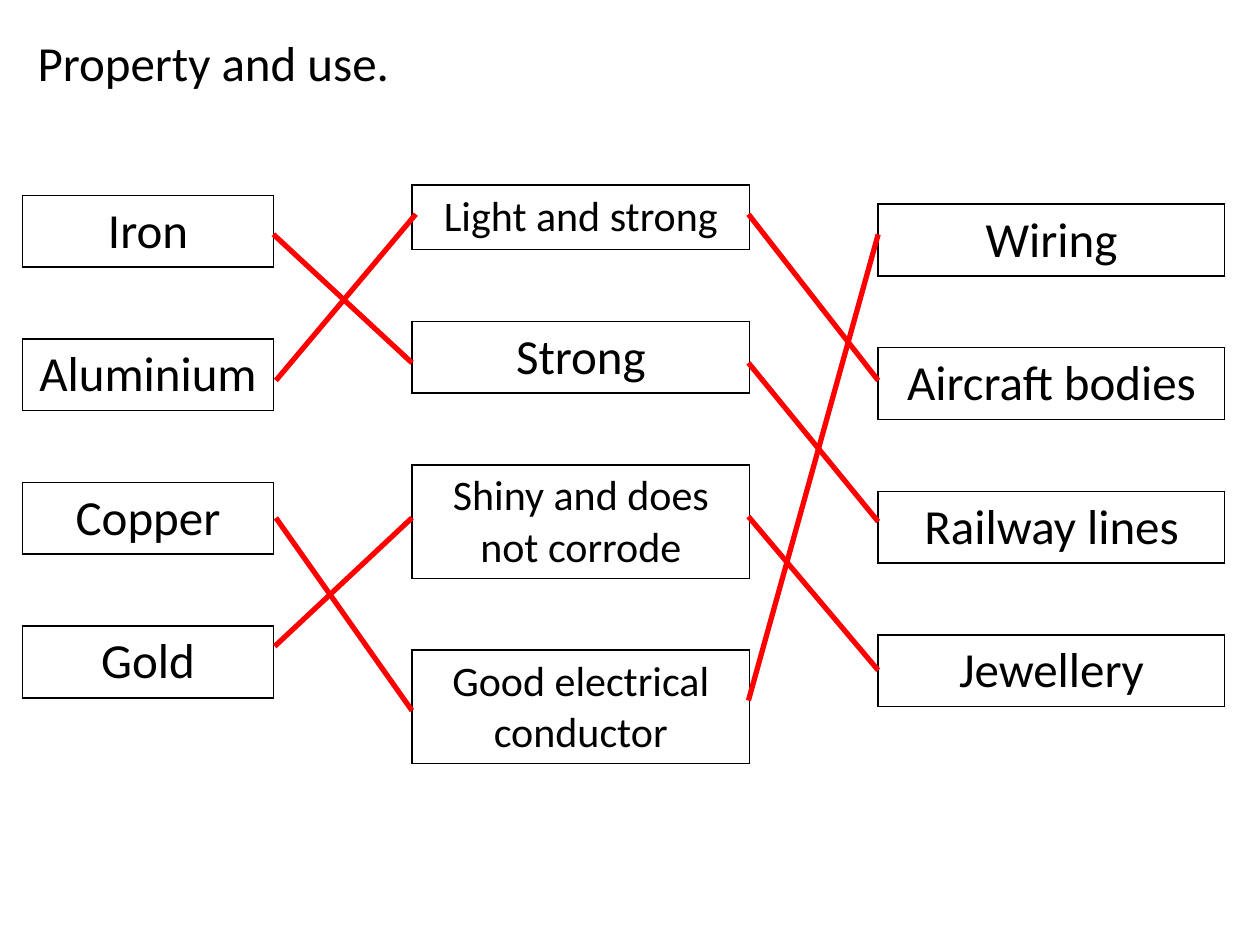
"""Build a slide matching metals to their properties and uses."""
from lxml import etree
from pptx import Presentation
from pptx.dml.color import RGBColor
from pptx.enum.shapes import MSO_CONNECTOR
from pptx.enum.text import MSO_AUTO_SIZE, PP_ALIGN
from pptx.oxml.ns import qn
from pptx.util import Inches, Pt

BLACK = RGBColor(0x00, 0x00, 0x00)
RED = RGBColor(0xFF, 0x00, 0x00)
STRAIGHT = MSO_CONNECTOR.STRAIGHT
CENTER = PP_ALIGN.CENTER
FIT_SHAPE = MSO_AUTO_SIZE.SHAPE_TO_FIT_TEXT
FONT = "Calibri"
ROW_H = 0.57


def add_run(p, text, size):
    r = p.add_run()
    r.text = text
    r.font.name = FONT
    r.font.size = Pt(size)
    r.font.color.rgb = BLACK


def set_borders(cell, visible):
    tc_pr = cell._tc.get_or_add_tcPr()
    for side in "LRTB":
        ln = etree.SubElement(tc_pr, qn(f"a:ln{side}"), w=str(Pt(1)))
        if side in visible:
            fill = etree.SubElement(ln, qn("a:solidFill"))
            etree.SubElement(fill, qn("a:srgbClr"), val=str(BLACK))
        else:
            etree.SubElement(ln, qn("a:noFill"))


prs = Presentation()
prs.slide_width = Inches(10)
prs.slide_height = Inches(7.5)
s = prs.slides.add_slide(prs.slide_layouts[6])

tb = s.shapes.add_textbox(Inches(0.2), Inches(0.21), Inches(9.37), Inches(0.57))
tf = tb.text_frame
tf.word_wrap = True
tf.auto_size = FIT_SHAPE
add_run(tf.paragraphs[0], "Property and use.", 28)

metals = [(name, 28, ROW_H) for name in ("Iron", "Aluminium", "Copper", "Gold")]
properties = [
    ("Light and strong", 24, 0.51),
    ("Strong", 28, ROW_H),
    ("Shiny and does not corrode", 24, 0.9),
    ("Good electrical conductor", 24, 0.9),
]
uses = [(name, 28, ROW_H)
        for name in ("Wiring", "Aircraft bodies", "Railway lines", "Jewellery")]

for left, top, width, entries in (
    (0.18, 1.55, 1.99, metals),
    (3.27, 1.47, 2.68, properties),
    (6.97, 1.62, 2.75, uses),
):
    rows = 2 * len(entries) - 1
    height = sum(h for _, _, h in entries) + ROW_H * (len(entries) - 1)
    table = s.shapes.add_table(rows, 1, Inches(left), Inches(top),
                               Inches(width), Inches(height)).table
    table.first_row = False
    table.horz_banding = False
    table.columns[0].width = Inches(width)
    for i in range(rows):
        cell = table.cell(i, 0)
        is_gap = i % 2 == 1
        set_borders(cell, "TB" if is_gap else "LRTB")
        cell.fill.background()
        if is_gap:
            table.rows[i].height = Inches(ROW_H)
            continue
        text, size, row_h = entries[i // 2]
        table.rows[i].height = Inches(row_h)
        p = cell.text_frame.paragraphs[0]
        p.alignment = CENTER
        add_run(p, text, size)

for x1, y1, x2, y2 in (
    (2.17, 1.86, 3.27, 2.88),
    (5.94, 2.88, 6.97, 4.14),
    (2.19, 3.02, 3.3, 1.7),
    (5.94, 1.7, 6.97, 3.02),
    (2.19, 4.11, 3.27, 5.64),
    (2.18, 5.13, 3.27, 4.11),
    (5.94, 4.1, 6.97, 5.32),
    (5.94, 5.56, 6.97, 1.86),
):
    line = s.shapes.add_connector(STRAIGHT, Inches(x1), Inches(y1),
                                  Inches(x2), Inches(y2))
    line.line.color.rgb = RED
    line.line.width = Pt(3)
    etree.SubElement(line._element.spPr, qn("a:effectLst"))

prs.save("out.pptx")
